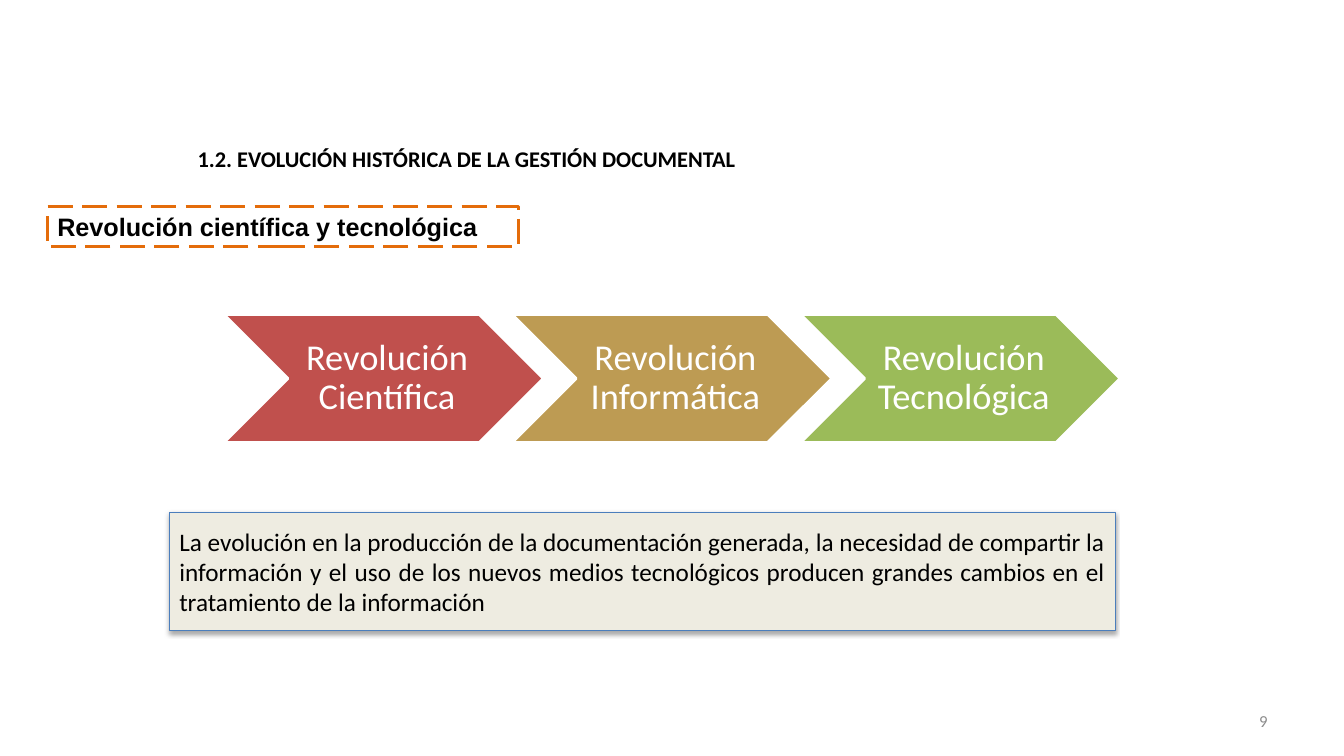
from lxml.etree import SubElement
from pptx import Presentation
from pptx.dml.color import RGBColor
from pptx.enum.dml import MSO_LINE
from pptx.enum.shapes import MSO_SHAPE as Shape
from pptx.enum.text import MSO_ANCHOR as Anchor, PP_ALIGN as Align
from pptx.oxml.ns import qn
from pptx.util import Inches, Pt

HEADING = "1.2. EVOLUCIÓN HISTÓRICA DE LA GESTIÓN DOCUMENTAL"
TOPIC = "Revolución científica y tecnológica"
REVOLUTIONS = [
    ("Revolución Científica", "red"),
    ("Revolución Informática", "ochre"),
    ("Revolución Tecnológica", "green"),
]
SUMMARY = (
    "La evolución en la producción de la documentación generada, la necesidad "
    "de compartir la información y el uso de los nuevos medios tecnológicos "
    "producen grandes cambios en el tratamiento de la información"
)
PAGE_NUMBER = "9"

COLORS = {
    "black": "000000", "white": "FFFFFF", "gray": "8C8C8C",
    "red": "C0504D", "ochre": "BD9B53", "green": "9BBB59",
    "orange": "E46C0A", "cream": "EEECE1", "blue": "4B7EBC",
}
CHEVRON_LEFT, CHEVRON_TOP, CHEVRON_STEP = 2.22, 3.12, 2.86
CHEVRON_WIDTH, CHEVRON_HEIGHT = 3.17, 1.27


def color(name):
    return RGBColor.from_string(COLORS[name])


def write(box, text, size, ink="black", font="Calibri", bold=False,
          align=Align.LEFT, anchor=Anchor.TOP):
    frame = box.text_frame
    frame.word_wrap = True
    frame.vertical_anchor = anchor
    frame.text = text
    paragraph = frame.paragraphs[0]
    paragraph.alignment = align
    paragraph.font.name = font
    paragraph.font.size = Pt(size)
    paragraph.font.bold = bold
    paragraph.font.color.rgb = color(ink)
    return frame


def add_panel(slide, kind, box, fill, line, line_width):
    panel = slide.shapes.add_shape(kind, *map(Inches, box))
    panel.shadow.inherit = False
    if fill:
        panel.fill.solid()
        panel.fill.fore_color.rgb = color(fill)
    else:
        panel.fill.background()
    panel.line.color.rgb = color(line)
    panel.line.width = Pt(line_width)
    return panel


def add_drop_shadow(panel):
    effects = panel._element.spPr.find(qn("a:effectLst"))
    shadow = SubElement(effects, qn("a:outerShdw"), blurRad=str(Pt(3.1)),
                        dist=str(Pt(1.8)), dir="5400000", rotWithShape="0")
    tint = SubElement(shadow, qn("a:srgbClr"), val=COLORS["black"])
    SubElement(tint, qn("a:alpha"), val="35000")


def main():
    prs = Presentation()
    prs.slide_width, prs.slide_height = Inches(13.33), Inches(7.5)
    slide = prs.slides.add_slide(prs.slide_layouts[5])

    # Heading
    heading = slide.shapes.title
    heading.left, heading.top = Inches(1.86), Inches(1.39)
    heading.width, heading.height = Inches(5.98), Inches(0.37)
    write(heading, HEADING, 16, bold=True)

    # Dashed topic label
    topic = add_panel(slide, Shape.RECTANGLE, (0.47, 2.05, 4.67, 0.4),
                      None, "orange", 2.25)
    topic.line.dash_style = MSO_LINE.LONG_DASH
    write(topic, TOPIC, 18, font="Arial", bold=True)

    # Row of chevrons
    for i, (name, fill) in enumerate(REVOLUTIONS):
        box = (CHEVRON_LEFT + i * CHEVRON_STEP, CHEVRON_TOP,
               CHEVRON_WIDTH, CHEVRON_HEIGHT)
        chevron = add_panel(slide, Shape.CHEVRON, box, fill, "white", 2)
        frame = write(chevron, name, 26, "white",
                      align=Align.CENTER, anchor=Anchor.MIDDLE)
        frame.paragraphs[0].line_spacing = 0.9
        frame.margin_left = Inches(0.11)
        frame.margin_right = frame.margin_top = frame.margin_bottom = Inches(0.04)

    # Summary panel
    summary = add_panel(slide, Shape.RECTANGLE, (1.68, 5.08, 9.38, 1.18),
                        "cream", "blue", 0.75)
    add_drop_shadow(summary)
    write(summary, SUMMARY, 18, align=Align.JUSTIFY, anchor=Anchor.MIDDLE)

    # Page number
    page = slide.shapes.add_textbox(*map(Inches, (9.56, 6.95, 3.11, 0.4)))
    write(page, PAGE_NUMBER, 12, "gray", align=Align.RIGHT, anchor=Anchor.MIDDLE)

    prs.save("out.pptx")


if __name__ == "__main__":
    main()
